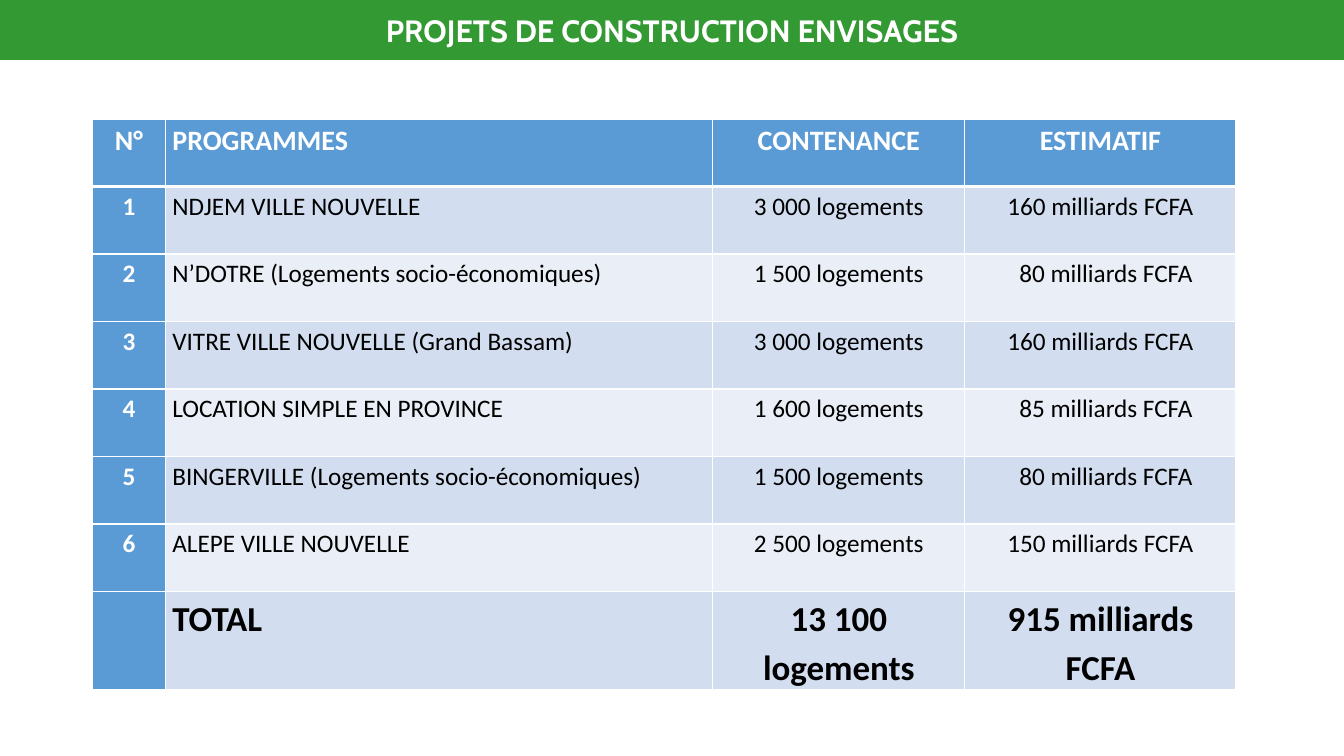
"""Build the slide listing the planned construction projects."""
from lxml import etree
from pptx import Presentation
from pptx.dml.color import RGBColor
from pptx.enum.text import MSO_ANCHOR, MSO_AUTO_SIZE, PP_ALIGN
from pptx.oxml.ns import qn
from pptx.util import Inches, Pt

LEFT, CENTER = PP_ALIGN.LEFT, PP_ALIGN.CENTER
MIDDLE = MSO_ANCHOR.MIDDLE
NO_AUTOFIT = MSO_AUTO_SIZE.NONE
TITLE_ONLY = 5

GREEN, BLUE, WHITE, BLACK = "339933", "5B9BD5", "FFFFFF", "000000"
BANDS = ("D2DEEF", "EAEFF7")
COLUMN_WIDTHS = (0.72, 5.43, 2.5, 2.69)
ROW_HEIGHT = 0.67
CELL_MARGIN = 0.07
SHORT_AMOUNT_INDENT = 0.11

ROWS = (
    ("N°", "PROGRAMMES", "CONTENANCE", "ESTIMATIF"),
    ("1", "NDJEM VILLE NOUVELLE", "3 000 logements", "160 milliards FCFA"),
    ("2", "N’DOTRE (Logements socio-économiques)", "1 500 logements", "80 milliards FCFA"),
    ("3", "VITRE VILLE NOUVELLE (Grand Bassam)", "3 000 logements", "160 milliards FCFA"),
    ("4", "LOCATION SIMPLE EN PROVINCE", "1 600 logements", "85 milliards FCFA"),
    ("5", "BINGERVILLE (Logements socio-économiques)", "1 500 logements", "80 milliards FCFA"),
    ("6", "ALEPE VILLE NOUVELLE", "2 500 logements", "150 milliards FCFA"),
    ("", "TOTAL", "13 100 logements", "915 milliards FCFA"),
)


def color(value):
    """Turn a hex string into a colour."""
    return RGBColor.from_string(value)


def write(frame, text, *, size, fill, font="Calibri", bold=False, align=CENTER, spacing=1.0):
    """Write one formatted paragraph into a text frame."""
    para = frame.paragraphs[0]
    para.alignment = align
    para.line_spacing = spacing
    para.space_before = Pt(0)
    para.font.size = Pt(size)
    if text:
        span = para.add_run()
        span.text = text
        span.font.name = font
        span.font.size = Pt(size)
        span.font.bold = bold
        span.font.color.rgb = color(fill)


class Page:
    """Hold the style and the current slide."""

    def __init__(self, deck):
        """Add a slide with a title to the deck."""
        self.width = deck.slide_width
        self.slide = deck.slides.add_slide(deck.slide_layouts[TITLE_ONLY])

    def banner(self, text):
        """Turn the title into a full-width band."""
        title = self.slide.shapes.title
        title.left, title.top = Inches(0), Inches(0)
        title.width, title.height = self.width, Inches(0.59)
        title.fill.solid()
        title.fill.fore_color.rgb = color(GREEN)
        title.line.color.rgb = color(GREEN)
        title.line.width = Pt(1)
        frame = title.text_frame
        frame.auto_size = NO_AUTOFIT
        frame.word_wrap = True
        frame.vertical_anchor = MIDDLE
        write(frame, text, size=22, fill=WHITE, font="Cabin", bold=True)

    def border(self, cell, side, width):
        """Draw a white border on one side of a cell."""
        properties = cell._tc.get_or_add_tcPr()
        line = etree.SubElement(properties, qn(f"a:ln{side}"), w=str(Pt(width)))
        fill = etree.SubElement(line, qn("a:solidFill"))
        etree.SubElement(fill, qn("a:srgbClr"), val=WHITE)

    def cell(self, cell, text, row, column):
        """Format one cell according to its place in the table."""
        header, total = row == 0, row == len(ROWS) - 1
        accent = header or column == 0
        short = column == 3 and text.startswith("8")
        cell.margin_left = Inches(CELL_MARGIN + SHORT_AMOUNT_INDENT * short)
        cell.margin_right = Inches(CELL_MARGIN)
        cell.margin_top = cell.margin_bottom = Inches(0)
        widths = {"L": 1, "R": 1, "T": 3 if row == 1 else 1, "B": 3 if header else 1}
        for side, width in widths.items():
            self.border(cell, side, width)
        cell.fill.solid()
        cell.fill.fore_color.rgb = color(BLUE if accent else BANDS[(row - 1) % 2])
        write(
            cell.text_frame, text,
            size=20 if header else 25 if total else 18,
            fill=WHITE if accent else BLACK,
            bold=accent or total,
            align=LEFT if column == 1 else CENTER,
            spacing=1.15,
        )

    def table(self, rows, left, top):
        """Add the table of programmes."""
        table = self.slide.shapes.add_table(
            len(rows), len(COLUMN_WIDTHS), Inches(left), Inches(top),
            Inches(sum(COLUMN_WIDTHS)), Inches(ROW_HEIGHT * len(rows)),
        ).table
        for column, width in zip(table.columns, COLUMN_WIDTHS):
            column.width = Inches(width)
        for row, texts in enumerate(rows):
            table.rows[row].height = Inches(ROW_HEIGHT)
            for column, text in enumerate(texts):
                self.cell(table.cell(row, column), text, row, column)


def main():
    """Build and save the deck."""
    deck = Presentation()
    deck.slide_width, deck.slide_height = Inches(13.33), Inches(7.5)
    page = Page(deck)
    page.banner("PROJETS DE CONSTRUCTION ENVISAGES")
    page.table(ROWS, 0.92, 1.18)
    deck.save("out.pptx")


if __name__ == "__main__":
    main()
